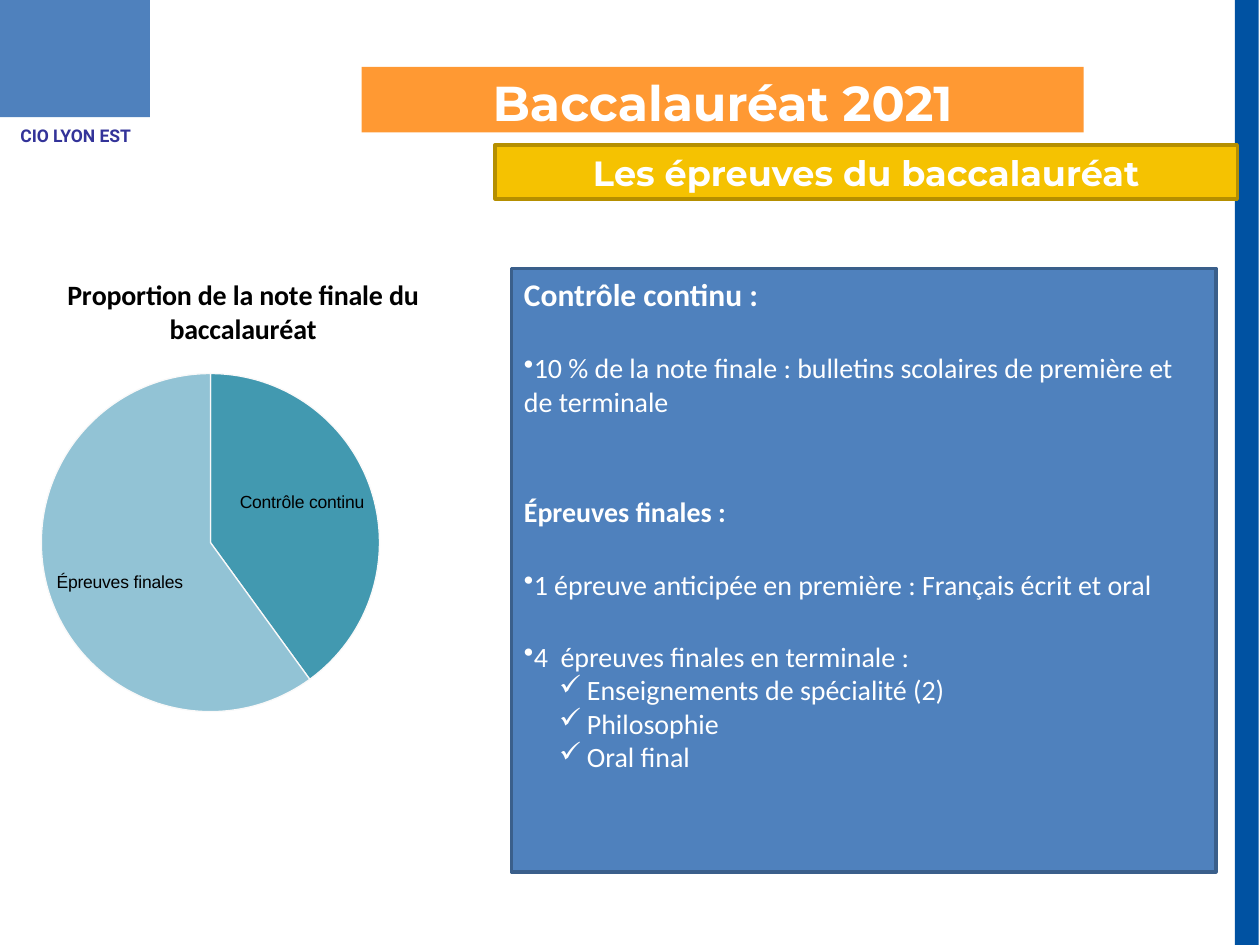
from lxml import etree
from pptx import Presentation
from pptx.chart.data import CategoryChartData as ChartData
from pptx.dml.color import RGBColor as RGB
from pptx.enum.chart import XL_CHART_TYPE as Kind, XL_LABEL_POSITION as Spot
from pptx.enum.shapes import MSO_SHAPE as Form
from pptx.enum.text import MSO_ANCHOR as Anchor, PP_ALIGN as Align
from pptx.oxml import parse_xml
from pptx.oxml.ns import nsdecls, qn
from pptx.util import Inches, Pt

WHITE = RGB(0xFF, 0xFF, 0xFF)
BLACK = RGB(0, 0, 0)
NAVY = RGB(0x00, 0x52, 0xA2)
BLUE = RGB(0x4F, 0x81, 0xBD)
STEEL = RGB(0x3A, 0x5F, 0x8B)
INDIGO = RGB(0x33, 0x33, 0x99)
ORANGE = RGB(0xFF, 0x99, 0x33)
GOLD = RGB(0xF5, 0xC2, 0x01)
BRONZE = RGB(0xB5, 0x8F, 0x00)
EDGE = RGB(0xF9, 0xF9, 0xF9)
TEALS = [RGB(0x42, 0x99, 0xB0), RGB(0x92, 0xC3, 0xD5)]

TITLE = "Proportion de la note finale du baccalauréat"
SHARES = {"Contrôle continu": 40, "Épreuves finales": 60}

# Text, size, bold, bullet, space before in points
EXAMS = [
    ("Contrôle continu :", 18, True, None, 0),
    ("10 % de la note finale : bulletins scolaires de première et de terminale",
     16, False, "•", 22),
    ("Épreuves finales :", 16, True, None, 44),
    ("1 épreuve anticipée en première : Français écrit et oral",
     16, False, "•", 22),
    ("4  épreuves finales en terminale :", 16, False, "•", 22),
    ("Enseignements de spécialité (2)", 16, False, "✓", 0),
    ("Philosophie", 16, False, "✓", 0),
    ("Oral final", 16, False, "✓", 0),
]


def style(font, name, size, color, bold=False):
    font.name = name
    font.size = Pt(size)
    font.bold = bold
    font.color.rgb = color


def add_box(slide, place, fill, line=None):
    box = slide.shapes.add_shape(Form.RECTANGLE, *map(Inches, place))
    box.shadow.inherit = False
    box.fill.solid()
    box.fill.fore_color.rgb = fill
    if line is None:
        box.line.fill.background()
    else:
        box.line.color.rgb = line
        box.line.width = Pt(2)
    box.text_frame.vertical_anchor = Anchor.TOP
    return box


def write(shape, text, *look):
    frame = shape.text_frame
    frame.word_wrap = True
    frame.text = text
    para = frame.paragraphs[0]
    para.alignment = Align.CENTER
    style(para.runs[0].font, *look)


def set_bullet(para, mark):
    props = para._p.get_or_add_pPr()
    if mark == "✓":
        para.level = 1
        props.set("marL", str(Inches(0.5)))
        props.set("indent", str(Inches(-0.22)))
    etree.SubElement(props, qn("a:buChar")).set("char", mark)


def add_list(shape, items):
    frame = shape.text_frame
    frame.word_wrap = True
    frame.text = "\n".join(item[0] for item in items)
    for para, (_, size, bold, mark, gap) in zip(frame.paragraphs, items):
        para.alignment = Align.LEFT
        if gap:
            para.space_before = Pt(gap)
        if mark:
            set_bullet(para, mark)
        style(para.runs[0].font, "Calibri", size, WHITE, bold)


def add_pie(slide, place):
    data = ChartData()
    data.categories = list(SHARES)
    data.add_series(TITLE, list(SHARES.values()))
    chart = slide.shapes.add_chart(
        Kind.PIE, *map(Inches, place), data).chart
    style(chart.font, "Arial", 10, BLACK)
    chart.has_legend = False

    # Title over the plot
    chart.has_title = True
    head = chart.chart_title
    head.text_frame.text = TITLE
    style(head.text_frame.paragraphs[0].runs[0].font,
          "Calibri", 16, BLACK, True)
    head.include_in_layout = True

    # Slices
    plot = chart.plots[0]
    plot.vary_by_categories = True
    for num, color in enumerate(TEALS):
        look = plot.series[0].points[num].format
        look.fill.solid()
        look.fill.fore_color.rgb = color
        look.line.color.rgb = EDGE
        look.line.width = Pt(0.75)

    # Category names inside the slices
    plot.has_data_labels = True
    tags = plot.data_labels
    tags.show_category_name = True
    tags.show_value = False
    tags.show_percentage = False
    tags.position = Spot.INSIDE_END
    style(tags.font, "Arial", 10, BLACK)

    # Fixed plot area
    area = chart._chartSpace.chart.plotArea
    for old in area.findall(qn("c:layout")):
        area.remove(old)
    sides = {"x": 0.16, "y": 0.25, "w": 0.57, "h": 0.71}
    modes = '<c:layoutTarget val="inner"/>' + "".join(
        f'<c:{side}Mode val="edge"/>' for side in "xy")
    sizes = "".join(f'<c:{side} val="{val}"/>' for side, val in sides.items())
    area.insert(0, parse_xml(
        f'<c:layout {nsdecls("c")}><c:manualLayout>{modes}{sizes}'
        '</c:manualLayout></c:layout>'))


def main():
    deck = Presentation()
    deck.slide_width, deck.slide_height = Inches(10), Inches(7.5)
    slide = deck.slides.add_slide(deck.slide_layouts[6])

    # Side band and headings
    add_box(slide, (9.8, 0, 0.19, 7.5), NAVY)
    write(add_box(slide, (2.87, 0.53, 5.73, 0.52), ORANGE),
          "Baccalauréat 2021", "Montserrat", 28, WHITE, True)
    write(add_box(slide, (3.93, 1.15, 5.89, 0.43), GOLD, BRONZE),
          "Les épreuves du baccalauréat", "Montserrat", 20, WHITE, True)

    # Chart and exam list
    add_pie(slide, (-0.43, 2.02, 4.72, 3.78))
    add_list(add_box(slide, (4.06, 2.13, 5.59, 4.79), BLUE, STEEL), EXAMS)

    # Corner block and its caption
    add_box(slide, (0, 0, 1.19, 0.93), BLUE)
    note = slide.shapes.add_textbox(
        *map(Inches, (-0.29, 0.94, 1.78, 0.27)))
    write(note, "CIO LYON EST", "Roboto", 10, INDIGO, True)

    deck.save("out.pptx")


if __name__ == "__main__":
    main()
